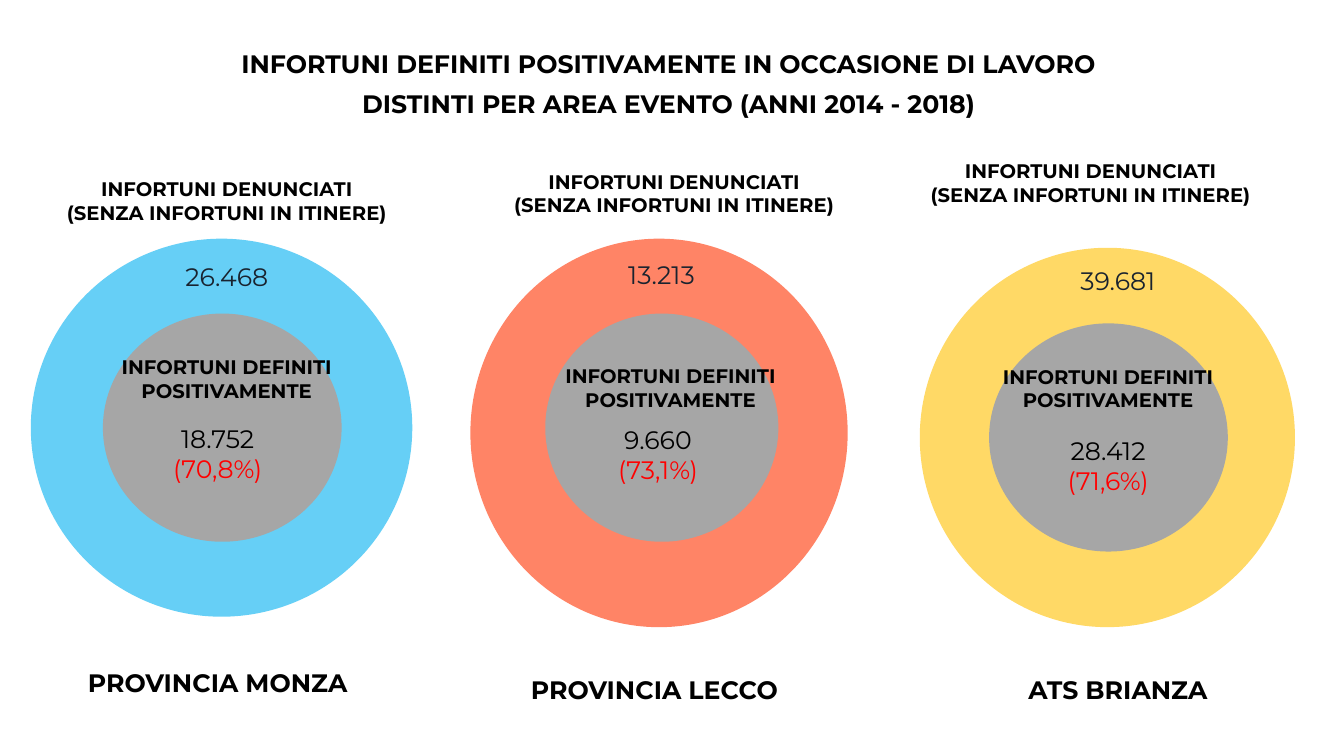
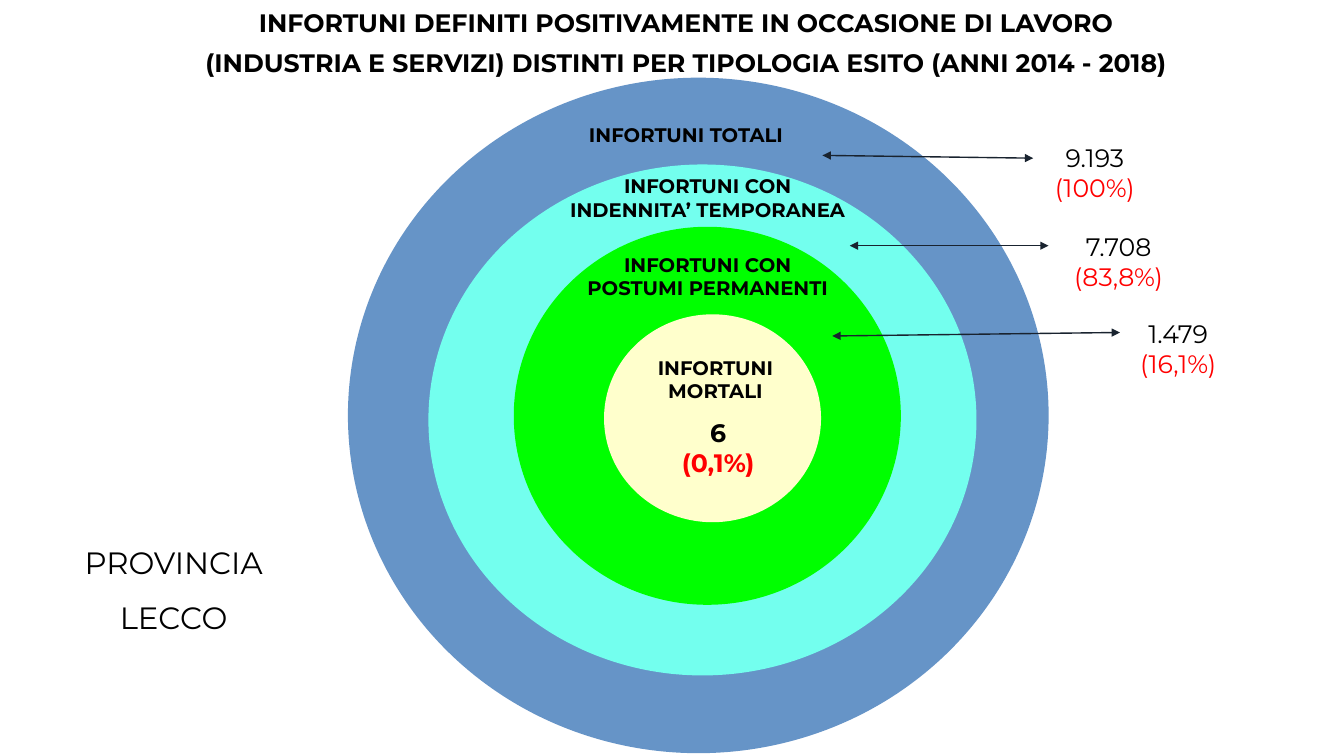
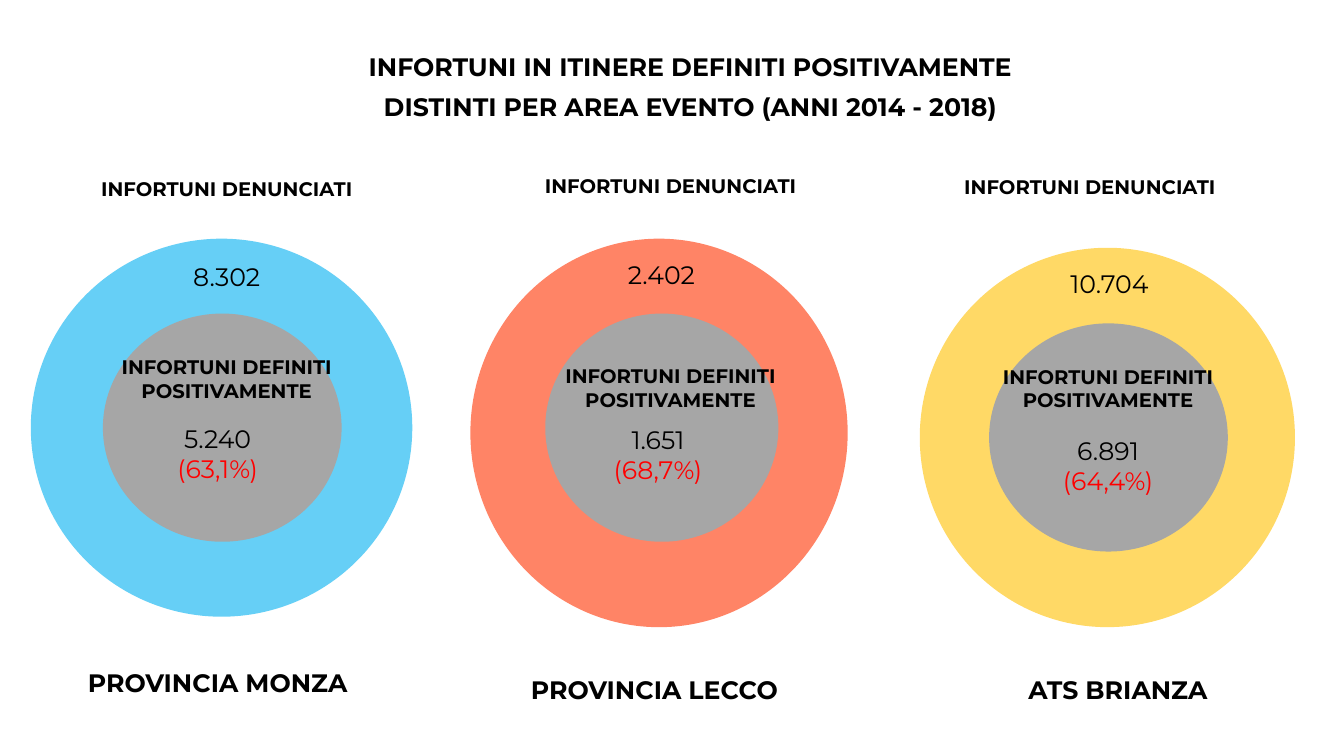
from itertools import cycle

from lxml.etree import SubElement
from pptx import Presentation
from pptx.dml.color import RGBColor
from pptx.enum.shapes import MSO_CONNECTOR, MSO_SHAPE
from pptx.enum.text import MSO_ANCHOR, MSO_AUTO_SIZE, PP_ALIGN
from pptx.oxml.ns import qn
from pptx.util import Pt

# Shared look
COLOURS = {
    "black": "000000", "ink": "19232F", "red": "FF0000", "grey": "A6A6A6",
    "sky": "00B0F0", "coral": "FF3300", "amber": "FFC000",
    "blue": "004EA3", "aqua": "73FFEE", "green": "00FF00", "cream": "FFFFCC",
}
FONT = "Montserrat"
STYLES = {
    "title": {"font": {"size": Pt(18), "bold": True}, "paragraph": {"space_after": Pt(7)}},
    "label": {"font": {"size": Pt(14), "bold": True}},
    "value": {"font": {"size": Pt(18), "bold": False}, "colours": ["black", "red"]},
    "bold value": {"font": {"size": Pt(18), "bold": True}, "colours": ["black", "red"]},
    "ink value": {"font": {"size": Pt(18), "bold": False}, "colours": ["ink"]},
    "area": {"font": {"size": Pt(18), "bold": True}, "paragraph": {"line_spacing": 1.5}},
    "large area": {"font": {"size": Pt(22), "bold": False}, "paragraph": {"line_spacing": 1.5}},
}


def add_text(slide, style_name, lines, centre, top, width, height):
    """Write centred lines in a box, or in the title placeholder for a title."""
    style = STYLES[style_name]
    box = [Pt(value) for value in (centre - width / 2, top, width, height)]
    shape = slide.shapes.title if style_name == "title" else slide.shapes.add_textbox(*box)
    shape.left, shape.top, shape.width, shape.height = box
    frame = shape.text_frame
    frame.word_wrap = True
    frame.auto_size = MSO_AUTO_SIZE.NONE
    frame.vertical_anchor = MSO_ANCHOR.TOP
    frame.text = "\n".join(lines)
    for paragraph, colour in zip(frame.paragraphs, cycle(style.get("colours", ["black"]))):
        paragraph.alignment = PP_ALIGN.CENTER
        for name, value in style.get("paragraph", {}).items():
            setattr(paragraph, name, value)
        font = paragraph.runs[0].font
        for name, value in {"name": FONT, **style["font"]}.items():
            setattr(font, name, value)
        font.color.rgb = RGBColor.from_string(COLOURS[colour])


def add_circle(slide, colour, box, opacity=100):
    shape = slide.shapes.add_shape(MSO_SHAPE.OVAL, *[Pt(value) for value in box])
    shape.shadow.inherit = False
    shape.line.fill.background()
    shape.fill.solid()
    shape.fill.fore_color.rgb = RGBColor.from_string(COLOURS[colour])
    if opacity < 100:
        colour_element = shape.fill._xPr.find(qn("a:solidFill"))[0]
        SubElement(colour_element, qn("a:alpha"), val=str(opacity * 1000))


presentation = Presentation()
presentation.slide_width, presentation.slide_height = Pt(960), Pt(540)
title_only = presentation.slide_layouts[5]
area_slide, outcome_slide, commute_slide = [
    presentation.slides.add_slide(title_only) for _ in range(3)
]

# Area slides: one ring with a core for each area
AREAS = [
    {"name": "PROVINCIA MONZA", "colour": "sky", "name at": (155.5, 462),
     "ring": (22, 170.5, 272.5, 270), "core": (73.5, 224, 170.5, 163),
     "defined at": (162, 250), "result at": (155.5, 299)},
    {"name": "PROVINCIA LECCO", "colour": "coral", "name at": (467.5, 467.5),
     "ring": (336, 170.5, 269.5, 277.5), "core": (389.5, 224, 166.5, 163),
     "defined at": (479, 256.5), "result at": (470, 299.5)},
    {"name": "ATS BRIANZA", "colour": "amber", "name at": (798.5, 467.5),
     "ring": (657, 177, 268, 271), "core": (706.5, 231, 170.5, 163),
     "defined at": (791.5, 257), "result at": (791.5, 307.5)},
]
AREA_SLIDES = [
    {"slide": area_slide, "title at": (477.5, 31), "count style": "ink value",
     "title": ["INFORTUNI DEFINITI POSITIVAMENTE IN OCCASIONE DI LAVORO",
               "DISTINTI PER AREA EVENTO (ANNI 2014 - 2018)"],
     "reported": ["INFORTUNI DENUNCIATI", "(SENZA INFORTUNI IN ITINERE)"],
     "reported at": [(162, 123), (481.5, 117.5), (779, 110)],
     "count at": [(162, 183), (472.5, 181.5), (798.5, 186)],
     "counts": ["26.468", "13.213", "39.681"],
     "results": [("18.752", "(70,8%)"), ("9.660", "(73,1%)"), ("28.412", "(71,6%)")]},
    {"slide": commute_slide, "title at": (493, 33), "count style": "value",
     "title": ["INFORTUNI IN ITINERE DEFINITI POSITIVAMENTE",
               "DISTINTI PER AREA EVENTO (ANNI 2014 - 2018)"],
     "reported": ["INFORTUNI DENUNCIATI"],
     "reported at": [(162, 123), (479, 120.5), (778.5, 121.5)],
     "count at": [(162, 183), (472.5, 181.5), (792.5, 188)],
     "counts": ["8.302", "2.402", "10.704"],
     "results": [("5.240", "(63,1%)"), ("1.651", "(68,7%)"), ("6.891", "(64,4%)")]},
]
for content in AREA_SLIDES:
    slide = content["slide"]
    add_text(slide, "title", content["title"], *content["title at"], 849, 58)
    for index, area in enumerate(AREAS):
        add_circle(slide, area["colour"], area["ring"], opacity=60)
        add_circle(slide, "grey", area["core"])
        add_text(slide, "label", content["reported"], *content["reported at"][index], 276, 41)
        add_text(slide, content["count style"], [content["counts"][index]],
                 *content["count at"][index], 101, 29)
        add_text(slide, "label", ["INFORTUNI DEFINITI", "POSITIVAMENTE"],
                 *area["defined at"], 200, 41)
        add_text(slide, "value", content["results"][index], *area["result at"], 101, 73)
        add_text(slide, "area", [area["name"]], *area["name at"], 226, 40)

# Outcome slide: nested circles, widest first
add_text(outcome_slide, "title",
         ["INFORTUNI DEFINITI POSITIVAMENTE IN OCCASIONE DI LAVORO",
          "(INDUSTRIA E SERVIZI) DISTINTI PER TIPOLOGIA ESITO (ANNI 2014 - 2018)"],
         490, 1.5, 920, 71)
OUTCOMES = [
    ("blue", (248.5, 55.5, 500.5, 482.5), 60, ["INFORTUNI TOTALI"], (490, 84)),
    ("aqua", (306, 117.5, 391.5, 365), 100,
     ["INFORTUNI CON", "INDENNITA’ TEMPORANEA"], (505.5, 121)),
    ("green", (367, 162, 276.5, 270), 100,
     ["INFORTUNI CON", "POSTUMI PERMANENTI"], (505.5, 177)),
    ("cream", (431.5, 224.5, 155, 148.5), 100, ["INFORTUNI", "MORTALI"], (511, 250.5)),
]
for colour, box, opacity, label, label_at in OUTCOMES:
    add_circle(outcome_slide, colour, box, opacity)
    add_text(outcome_slide, "label", label, *label_at, 276, 41)
add_text(outcome_slide, "bold value", ["6", "(0,1%)"], 513, 294.5, 258, 51)

# Values beside the circles, with double-headed arrows
CALLOUTS = [
    (("9.193", "(100%)"), (782, 98), (587.5, 111, 738, 113)),
    (("7.708", "(83,8%)"), (799, 161.5), (607, 175.5, 749, 175.5)),
    (("1.479", "(16,1%)"), (841.5, 224), (594.5, 240, 800, 237.5)),
]
for value, value_at, ends in CALLOUTS:
    arrow = outcome_slide.shapes.add_connector(
        MSO_CONNECTOR.STRAIGHT, *[Pt(end) for end in ends])
    arrow.line.width = Pt(1)
    arrow.line.color.rgb = RGBColor.from_string(COLOURS["ink"])
    for end in ("a:headEnd", "a:tailEnd"):
        SubElement(arrow.line._get_or_add_ln(), qn(end), type="triangle")
    SubElement(arrow._element.spPr, qn("a:effectLst"))
    add_text(outcome_slide, "value", value, *value_at, 101, 51)
add_text(outcome_slide, "large area", ["PROVINCIA LECCO"], 124, 371.5, 181, 83)

presentation.save("out.pptx")
